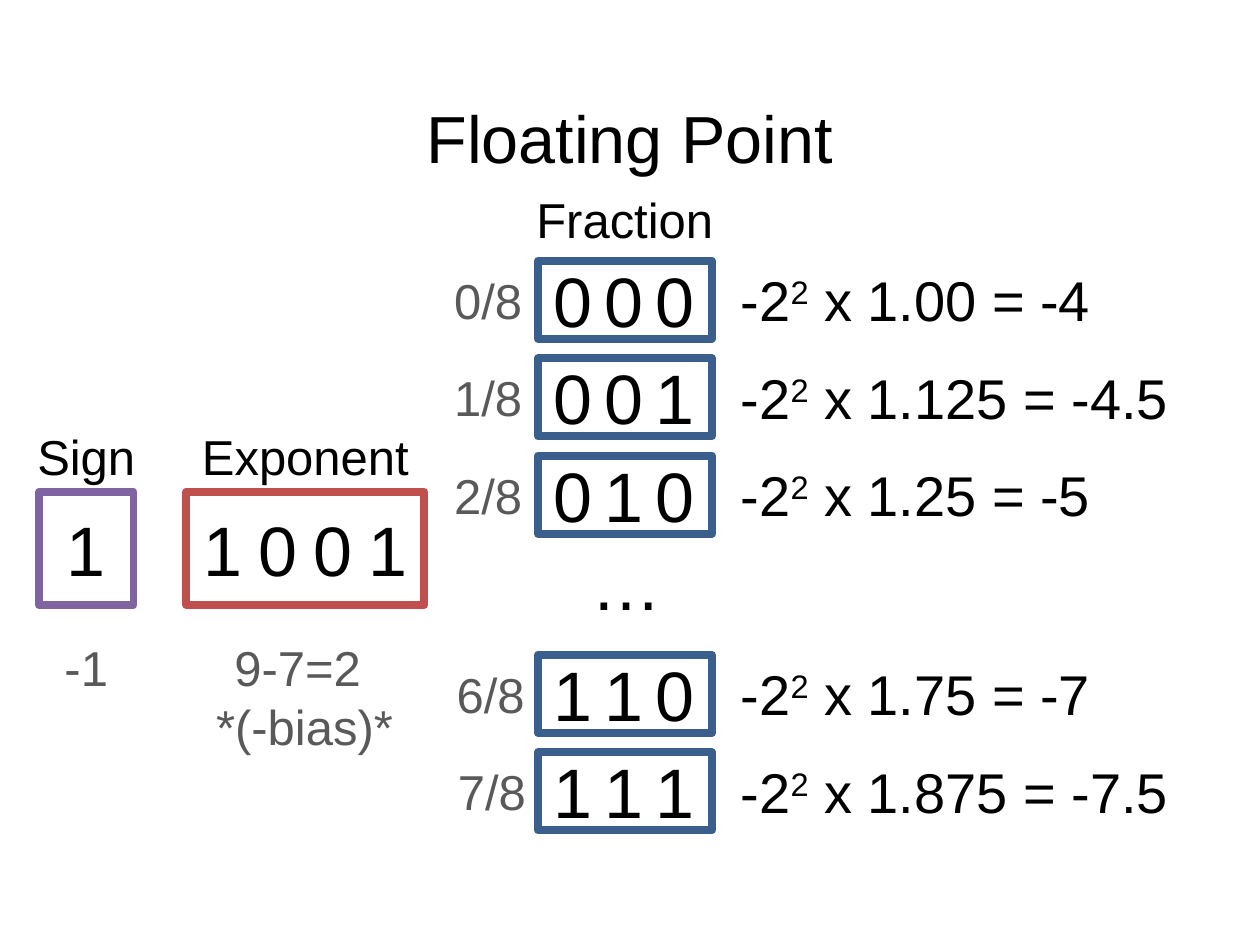
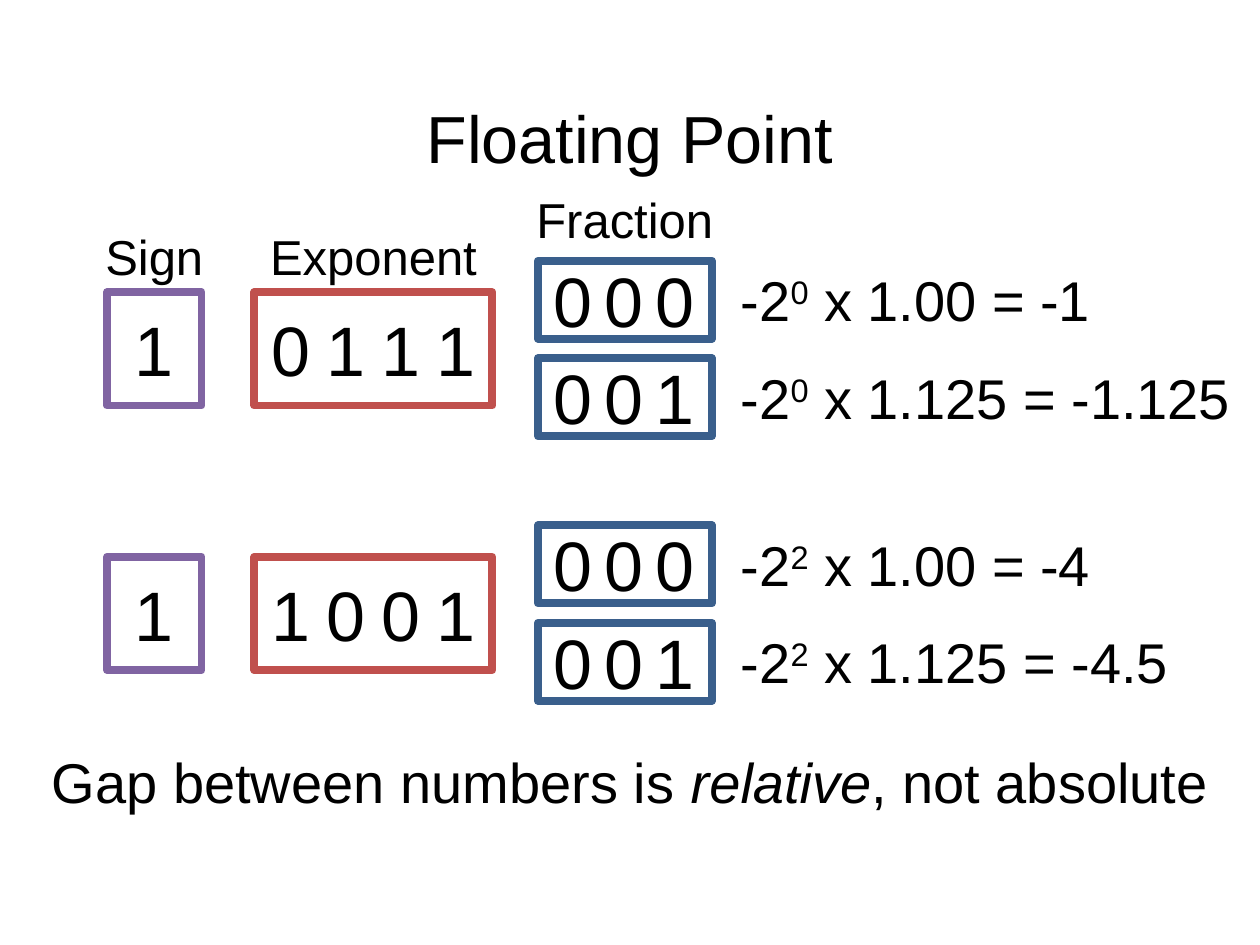
from pptx import Presentation
from pptx.dml.color import RGBColor
from pptx.enum.shapes import MSO_SHAPE
from pptx.enum.text import MSO_ANCHOR, MSO_AUTO_SIZE, PP_ALIGN
from pptx.util import Pt

FONT = "Arial"
BLACK, GREY = "000000", "595959"
PURPLE, RED, BLUE = "8064A2", "C0504D", "3A5F8C"
TITLE_SIZE, LABEL_SIZE, FORMULA_SIZE, DIGIT_SIZE = 38, 28, 32, 40
LABEL_HEIGHT, FORMULA_HEIGHT = 41, 46

DIGIT_WIDTH, DIGIT_HEIGHT = 40.3, 55.6
FRACTION_LEFT, FRACTION_WIDTH, FRACTION_HEIGHT = 307.4, 99.4, 44.6
FRACTION_DIGIT_PITCH = 29.2
FIRST_ROW, ROW_PITCH = 149, 55.7
SIGN_WIDTH, EXPONENT_WIDTH, FIELD_HEIGHT = 54, 136, 64.8
EXPONENT_OFFSET, EXPONENT_DIGIT_PITCH = 84.2, 31.4


def rgb(hex_color):
    return RGBColor.from_string(hex_color)


def style_run(run, size, color):
    run.font.name = FONT
    run.font.size = Pt(size)
    run.font.color.rgb = rgb(color)


def add_text(shapes, text, left, top, width, height, size=LABEL_SIZE,
             color=BLACK, align=PP_ALIGN.CENTER):
    """Add a text box; a list of strings becomes separate runs on one line."""
    frame = shapes.add_textbox(Pt(left), Pt(top), Pt(width), Pt(height)).text_frame
    frame.word_wrap = True
    frame.auto_size = MSO_AUTO_SIZE.SHAPE_TO_FIT_TEXT
    if isinstance(text, str):
        frame.text = text
    else:
        for part in text:
            frame.paragraphs[0].add_run().text = part
    for paragraph in frame.paragraphs:
        paragraph.alignment = align
        for run in paragraph.runs:
            style_run(run, size, color)
    return frame


def add_digits(shapes, digits, left, top, pitch):
    for index, digit in enumerate(digits):
        add_text(shapes, digit, left + index * pitch, top,
                 DIGIT_WIDTH, DIGIT_HEIGHT, DIGIT_SIZE)


def add_frame(shapes, left, top, width, height, color):
    outline = shapes.add_shape(MSO_SHAPE.RECTANGLE, Pt(left), Pt(top),
                               Pt(width), Pt(height))
    outline.shadow.inherit = False
    outline.fill.background()
    outline.line.color.rgb = rgb(color)
    outline.line.width = Pt(4.5)


def add_formula(shapes, exponent, result, top):
    formula = add_text(shapes, ["-2", exponent, f" x {result}"], 416.2, top,
                       314.6, FORMULA_HEIGHT, FORMULA_SIZE, align=PP_ALIGN.LEFT)
    power = formula.paragraphs[0].runs[1]
    power._r.get_or_add_rPr().set("baseline", "30000")


def add_fraction_row(slide, top, bits, exponent, result):
    """Add the framed fraction bits with the value they stand for."""
    shapes = slide.shapes.add_group_shape().shapes
    add_digits(shapes, bits, FRACTION_LEFT, top - 5.5, FRACTION_DIGIT_PITCH)
    add_frame(shapes, FRACTION_LEFT, top, FRACTION_WIDTH, FRACTION_HEIGHT, BLUE)
    add_formula(shapes, exponent, result, top - 0.8)
    return shapes


def add_sign_and_exponent(slide, left, top, sign, exponent, labelled=True):
    shapes = slide.shapes.add_group_shape().shapes
    exponent_left = left + EXPONENT_OFFSET
    add_digits(shapes, sign, left + 6.5, top + 4.8, 0)
    add_digits(shapes, exponent, exponent_left + 0.8, top + 4.8, EXPONENT_DIGIT_PITCH)
    add_frame(shapes, left, top, SIGN_WIDTH, FIELD_HEIGHT, PURPLE)
    add_frame(shapes, exponent_left, top, EXPONENT_WIDTH, FIELD_HEIGHT, RED)
    if labelled:
        add_text(shapes, "Sign", left - 13, top - LABEL_HEIGHT, 80, LABEL_HEIGHT)
        add_text(shapes, "Exponent", exponent_left, top - LABEL_HEIGHT,
                 EXPONENT_WIDTH, LABEL_HEIGHT)
    return shapes


def add_floating_point_slide(prs):
    """Add a slide with the shared title and the fraction column heading."""
    slide = prs.slides.add_slide(prs.slide_layouts[5])
    title = slide.shapes.title
    title.left, title.top, title.width, title.height = (
        Pt(49.5), Pt(28.8), Pt(621), Pt(104.4))
    title.text_frame.text = "Floating Point"
    title.text_frame.vertical_anchor = MSO_ANCHOR.MIDDLE
    heading = title.text_frame.paragraphs[0]
    heading.alignment = PP_ALIGN.CENTER
    heading.line_spacing = 0.9
    style_run(heading.runs[0], TITLE_SIZE, BLACK)
    add_text(slide.shapes, "Fraction", 258, 105, 198, LABEL_HEIGHT)
    return slide


def build_fraction_steps(prs):
    slide = add_floating_point_slide(prs)
    lower_rows = 374.2
    rows = [
        (0, FIRST_ROW, 242, "1.00 = -4"),
        (1, FIRST_ROW + ROW_PITCH, 242, "1.125 = -4.5"),
        (2, FIRST_ROW + 2 * ROW_PITCH, 242, "1.25 = -5"),
        (6, lower_rows, 243.4, "1.75 = -7"),
        (7, lower_rows + ROW_PITCH, 244.2, "1.875 = -7.5"),
    ]
    for eighths, top, eighths_left, result in rows:
        row = add_fraction_row(slide, top, f"{eighths:03b}", "2", result)
        add_text(row, f"{eighths}/8", eighths_left, top + 2, 63.4, LABEL_HEIGHT,
                 color=GREY, align=PP_ALIGN.RIGHT)
    add_text(slide.shapes, "…", 319, 305.3, 77.8, DIGIT_HEIGHT, DIGIT_SIZE)

    left, top = 22.3, 281
    fields = add_sign_and_exponent(slide, left, top, "1", "1001")
    decoded_top = top + 79.8
    add_text(fields, "-1", left - 11.5, decoded_top, 77, LABEL_HEIGHT, color=GREY)
    add_text(fields, "9-7=2 \n*(-bias)*", left + EXPONENT_OFFSET - 0.5, decoded_top,
             EXPONENT_WIDTH, 75, color=GREY)


def build_relative_gap(prs):
    slide = add_floating_point_slide(prs)
    examples = [
        (FIRST_ROW, "0111", "0", ["1.00 = -1", "1.125 = -1.125"], True),
        (300.2, "1001", "2", ["1.00 = -4", "1.125 = -4.5"], False),
    ]
    for top, exponent_bits, exponent, results, labelled in examples:
        add_sign_and_exponent(slide, 61.2, top + 18, "1", exponent_bits, labelled)
        for step, result in enumerate(results):
            add_fraction_row(slide, top + step * ROW_PITCH, f"{step:03b}",
                             exponent, result)
    conclusion = add_text(
        slide.shapes, ["Gap between numbers is ", "relative", ", not absolute"],
        15, 423.4, 690, FORMULA_HEIGHT, FORMULA_SIZE)
    conclusion.paragraphs[0].runs[1].font.italic = True


def main():
    prs = Presentation()
    prs.slide_width, prs.slide_height = Pt(720), Pt(540)
    build_fraction_steps(prs)
    build_relative_gap(prs)
    prs.save("out.pptx")


if __name__ == "__main__":
    main()
